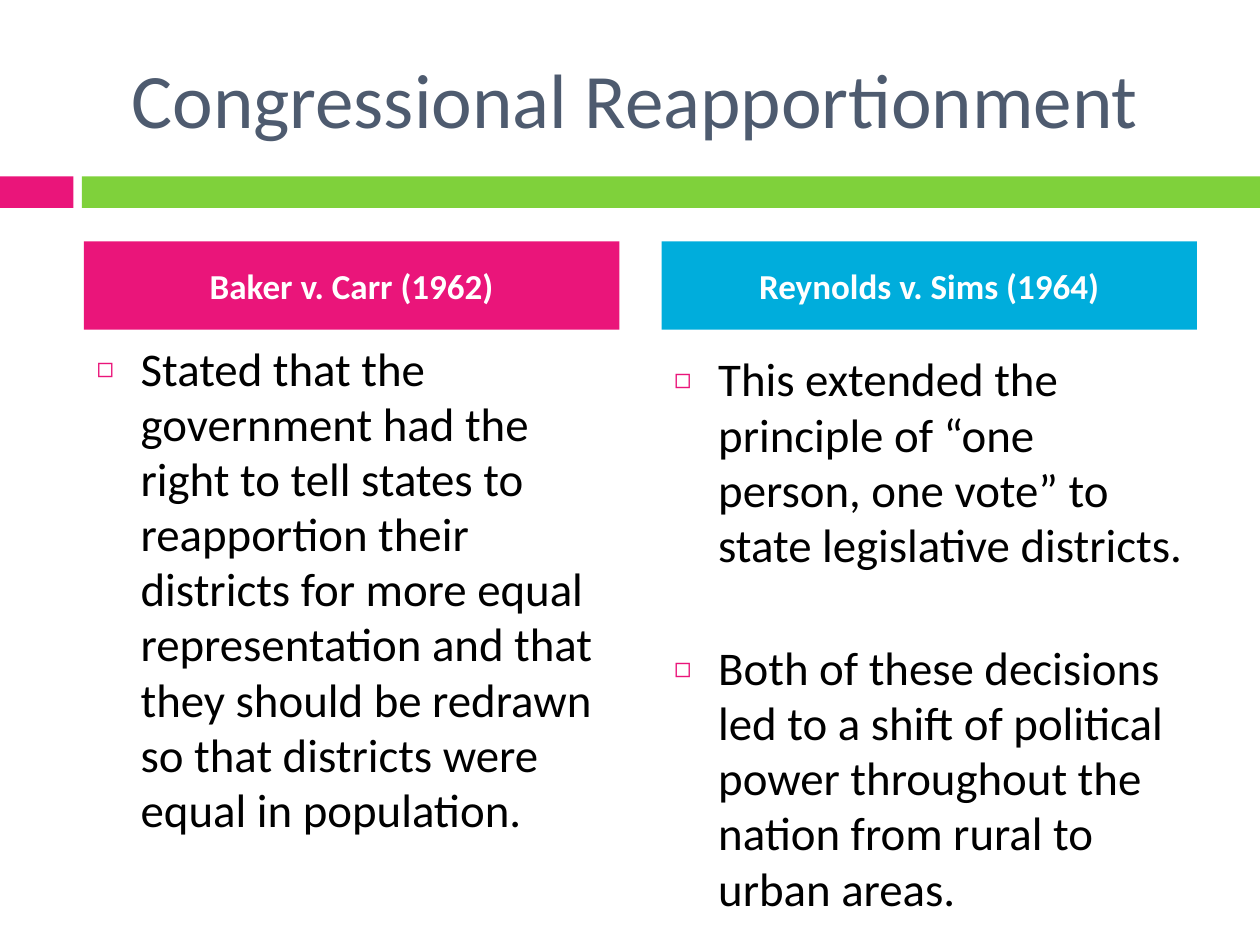
import pptx
import pptx.util
import pptx.dml.color
import pptx.enum.shapes
import pptx.enum.text
import pptx.oxml
import pptx.oxml.ns

COLOURS = {
    "pink": "EA157A",
    "green": "7FD13B",
    "blue": "00ADDC",
    "slate": "4E5B6F",
    "black": "000000",
    "white": "FFFFFF",
}
FONT = "Calibri"
COLUMNS, ROWS = 120, 90
COMPARISON_LAYOUT = 4


class SlideBuilder:
    """Holds the style and the slide; places are (column, row, columns, rows)."""

    def __init__(self, presentation):
        self.cell_width = presentation.slide_width / COLUMNS
        self.cell_height = presentation.slide_height / ROWS
        layout = presentation.slide_layouts[COMPARISON_LAYOUT]
        self.slide = presentation.slides.add_slide(layout)

    def box(self, column, row, columns, rows):
        return (round(column * self.cell_width), round(row * self.cell_height),
                round(columns * self.cell_width), round(rows * self.cell_height))

    def colour(self, name):
        return pptx.dml.color.RGBColor.from_string(COLOURS[name])

    def fill(self, shape, name):
        shape.fill.solid()
        shape.fill.fore_color.rgb = self.colour(name)

    def bar(self, place, colour):
        bar = self.slide.shapes.add_shape(
            pptx.enum.shapes.MSO_SHAPE.RECTANGLE, *self.box(*place))
        bar.shadow.inherit = False
        self.fill(bar, colour)
        bar.line.fill.background()

    def text(self, index, place, lines, size, colour, anchor, bold=False):
        holder = self.slide.placeholders[index]
        holder.left, holder.top, holder.width, holder.height = self.box(*place)
        frame = holder.text_frame
        frame.text = "\n".join(lines)
        frame.word_wrap = True
        frame.auto_size = pptx.enum.text.MSO_AUTO_SIZE.NONE
        frame.vertical_anchor = anchor
        for paragraph in frame.paragraphs:
            paragraph.font.name = FONT
            paragraph.font.size = pptx.util.Pt(size)
            paragraph.font.bold = bold
            paragraph.font.color.rgb = self.colour(colour)
        return holder

    def heading(self, index, place, line, size, colour, bold=False):
        holder = self.text(index, place, [line], size, colour,
                           pptx.enum.text.MSO_ANCHOR.MIDDLE, bold)
        holder.text_frame.paragraphs[0].alignment = pptx.enum.text.PP_ALIGN.CENTER
        return holder

    def banner(self, index, place, line, colour):
        holder = self.heading(index, place, line, 20, "white", bold=True)
        self.fill(holder, colour)

    def bullets(self, index, place, lines):
        holder = self.text(index, place, lines, 26.8, "black",
                           pptx.enum.text.MSO_ANCHOR.TOP)
        for number, paragraph in enumerate(holder.text_frame.paragraphs):
            paragraph.line_spacing = 0.98
            paragraph.space_before = pptx.util.Pt(39 if number else 7)
            self.add_bullet(paragraph)

    def add_bullet(self, paragraph):
        properties = paragraph._p.get_or_add_pPr()
        indent = pptx.util.Inches(0.35)
        properties.set("marL", str(indent))
        properties.set("indent", str(-indent))
        namespace = pptx.oxml.ns.nsdecls("a")
        font_defaults = properties.find(pptx.oxml.ns.qn("a:defRPr"))
        for xml in (
            f'<a:buClr {namespace}><a:srgbClr val="{COLOURS["pink"]}"/></a:buClr>',
            f'<a:buSzPct {namespace} val="60000"/>',
            f'<a:buChar {namespace} char="◻"/>',
        ):
            font_defaults.addprevious(pptx.oxml.parse_xml(xml))


def main():
    presentation = pptx.Presentation()
    presentation.slide_width = pptx.util.Inches(10)
    presentation.slide_height = pptx.util.Inches(7.5)
    builder = SlideBuilder(presentation)

    # Title and the divider below it
    builder.heading(0, (7, 3.6, 107, 11.4), "Congressional Reapportionment", 44, "slate")
    builder.bar((0, 16.8, 7, 3), "pink")
    builder.bar((7.8, 16.8, 112.2, 3), "green")

    # Two court cases: banner above its findings
    cases = [
        ("Baker v. Carr (1962)", "pink", 32, [
            "Stated that the government had the right to tell states to "
            "reapportion their districts for more equal representation and that "
            "they should be redrawn so that districts were equal in population.",
        ]),
        ("Reynolds v. Sims (1964)", "blue", 33, [
            "This extended the principle of “one person, one vote” to state "
            "legislative districts.",
            "Both of these decisions led to a shift of political power "
            "throughout the nation from rural to urban areas.",
        ]),
    ]
    for number, (case, colour, findings_row, findings) in enumerate(cases):
        column = 8 + 55 * number
        banner_index = 1 + 2 * number
        builder.bullets(banner_index + 1, (column, findings_row, 51, 47), findings)
        builder.banner(banner_index, (column, 23, 51, 8.4), case, colour)

    presentation.save("out.pptx")


if __name__ == "__main__":
    main()
